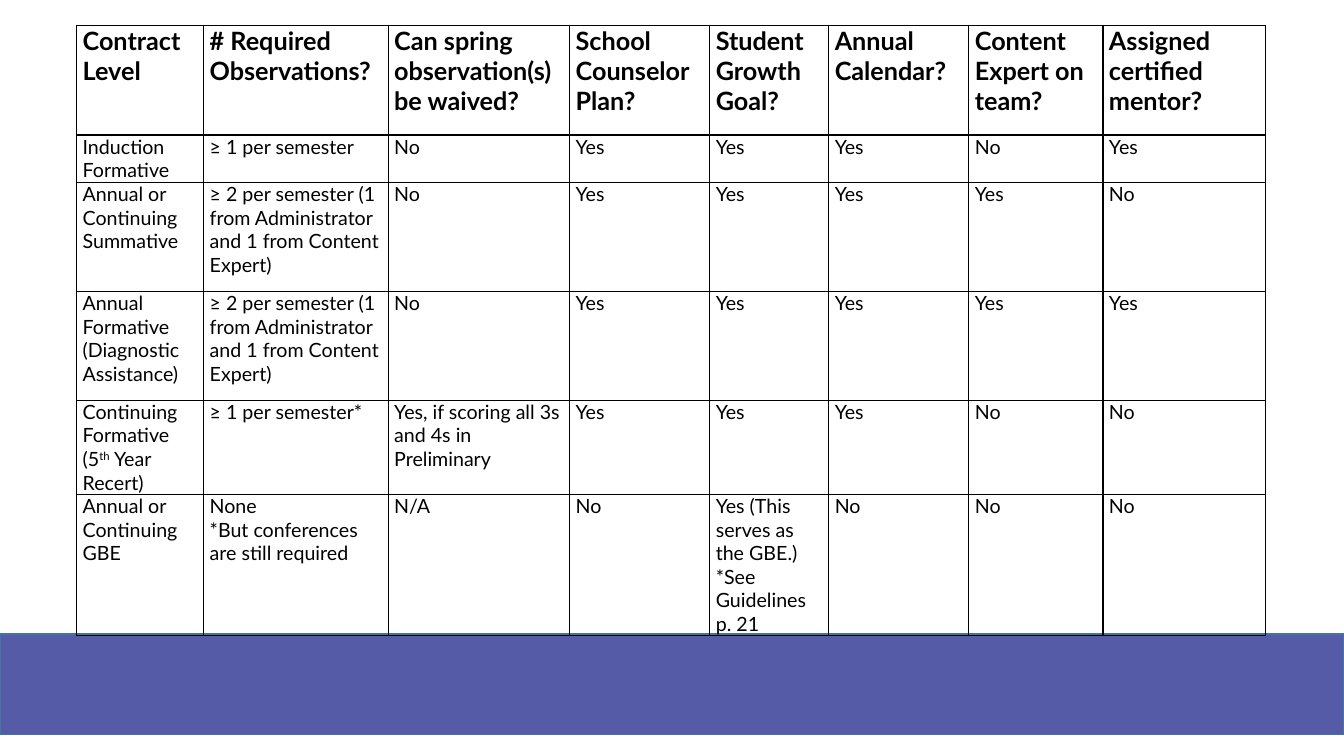
from lxml import etree
from pptx import Presentation
from pptx import util as u
from pptx.dml import color
from pptx.enum import shapes, text
from pptx.oxml import ns

WIDTH, HEIGHT = 13.33, 7.5
FONT = "Lato"
COLUMNS = [1.26, 1.83, 1.8, 1.39, 1.18, 1.39, 1.33, 1.61]
ROWS = [1.09, 0.47, 1.08, 1.08, 0.93, 1.4]
TWO_OBSERVATIONS = "≥ 2 per semester (1 from Administrator and 1 from Content Expert)"
CONTRACTS = [
    ["Contract Level", "# Required Observations?", "Can spring observation(s) be waived?",
     "School Counselor Plan?", "Student Growth Goal?", "Annual Calendar?",
     "Content Expert on team?", "Assigned certified mentor?"],
    ["Induction Formative", "≥ 1 per semester", "No", "Yes", "Yes", "Yes", "No", "Yes"],
    ["Annual or Continuing Summative", TWO_OBSERVATIONS,
     "No", "Yes", "Yes", "Yes", "Yes", "No"],
    ["Annual Formative (Diagnostic Assistance)", TWO_OBSERVATIONS,
     "No", "Yes", "Yes", "Yes", "Yes", "Yes"],
    ["Continuing Formative (5^th^ Year Recert)", "≥ 1 per semester*",
     "Yes, if scoring all 3s and 4s in Preliminary", "Yes", "Yes", "Yes", "No", "No"],
    ["Annual or Continuing GBE", "None\n*But conferences are still required", "N/A", "No",
     "Yes (This serves as the GBE.)\n*See Guidelines p. 21", "No", "No", "No"],
]


def rgb(value):
    return color.RGBColor.from_string(value)


def add_band(slide, top, height, fill, line):
    band = slide.shapes.add_shape(
        shapes.MSO_SHAPE.RECTANGLE, 0, u.Inches(top), u.Inches(WIDTH), u.Inches(height))
    band.shadow.inherit = False
    band.fill.solid()
    band.fill.fore_color.rgb = rgb(fill)
    band.line.color.rgb = rgb(line)
    band.line.width = u.Pt(1)


def add_borders(cell, line):
    properties = cell._tc.get_or_add_tcPr()
    for side in ("lnL", "lnR", "lnT", "lnB"):
        border = etree.SubElement(properties, ns.qn(f"a:{side}"), w=str(u.Pt(1)))
        fill = etree.SubElement(border, ns.qn("a:solidFill"))
        etree.SubElement(fill, ns.qn("a:srgbClr"), val=line)


def write_paragraph(paragraph, content, size, bold):
    paragraph.alignment = text.PP_ALIGN.LEFT
    for index, part in enumerate(content.split("^")):
        run = paragraph.add_run()
        run.text = part
        run.font.name = FONT
        run.font.size = u.Pt(size)
        run.font.bold = bold
        run.font.color.rgb = rgb("000000")
        if index % 2:
            run._r.get_or_add_rPr().set("baseline", "30000")


def fill_cell(cell, content, size, bold):
    cell.margin_left = cell.margin_right = u.Inches(0.06)
    cell.margin_top = cell.margin_bottom = 0
    add_borders(cell, "000000")
    cell.fill.background()
    frame = cell.text_frame
    for index, line in enumerate(content.split("\n")):
        paragraph = frame.add_paragraph() if index else frame.paragraphs[0]
        write_paragraph(paragraph, line, size, bold)


def add_contract_table(slide, left, top):
    table = slide.shapes.add_table(
        len(ROWS), len(COLUMNS), u.Inches(left), u.Inches(top),
        u.Inches(sum(COLUMNS)), u.Inches(sum(ROWS))).table
    table.first_row = table.horz_banding = False
    for column, width in zip(table.columns, COLUMNS):
        column.width = u.Inches(width)
    for number, (row, height, contents) in enumerate(zip(table.rows, ROWS, CONTRACTS)):
        row.height = u.Inches(height)
        heading = number == 0
        for cell, content in zip(row.cells, contents):
            fill_cell(cell, content, 18 if heading else 14, heading)


def main():
    presentation = Presentation()
    presentation.slide_width = u.Inches(WIDTH)
    presentation.slide_height = u.Inches(HEIGHT)
    slide = presentation.slides.add_slide(presentation.slide_layouts[6])
    add_band(slide, 6.29, 1, "565BA7", "43739E")
    add_contract_table(slide, 0.76, 0.25)
    presentation.save("out.pptx")


if __name__ == "__main__":
    main()
